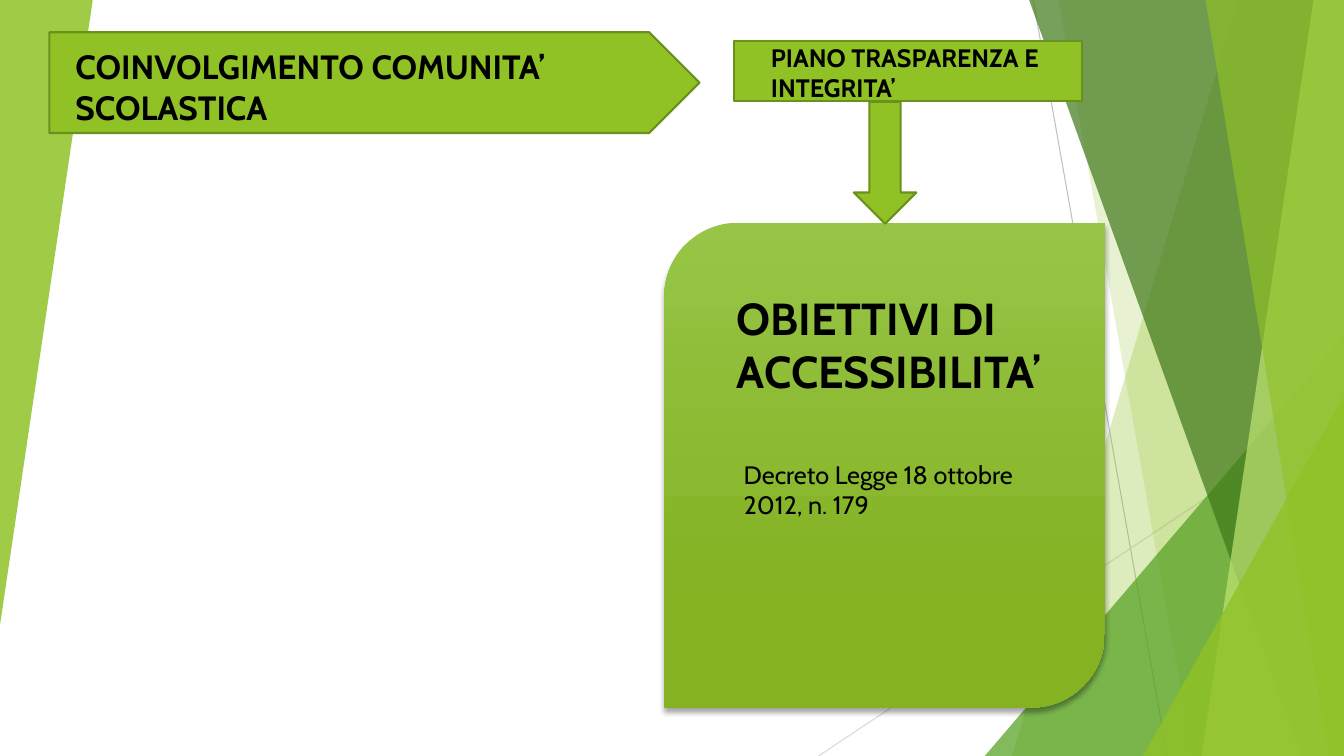
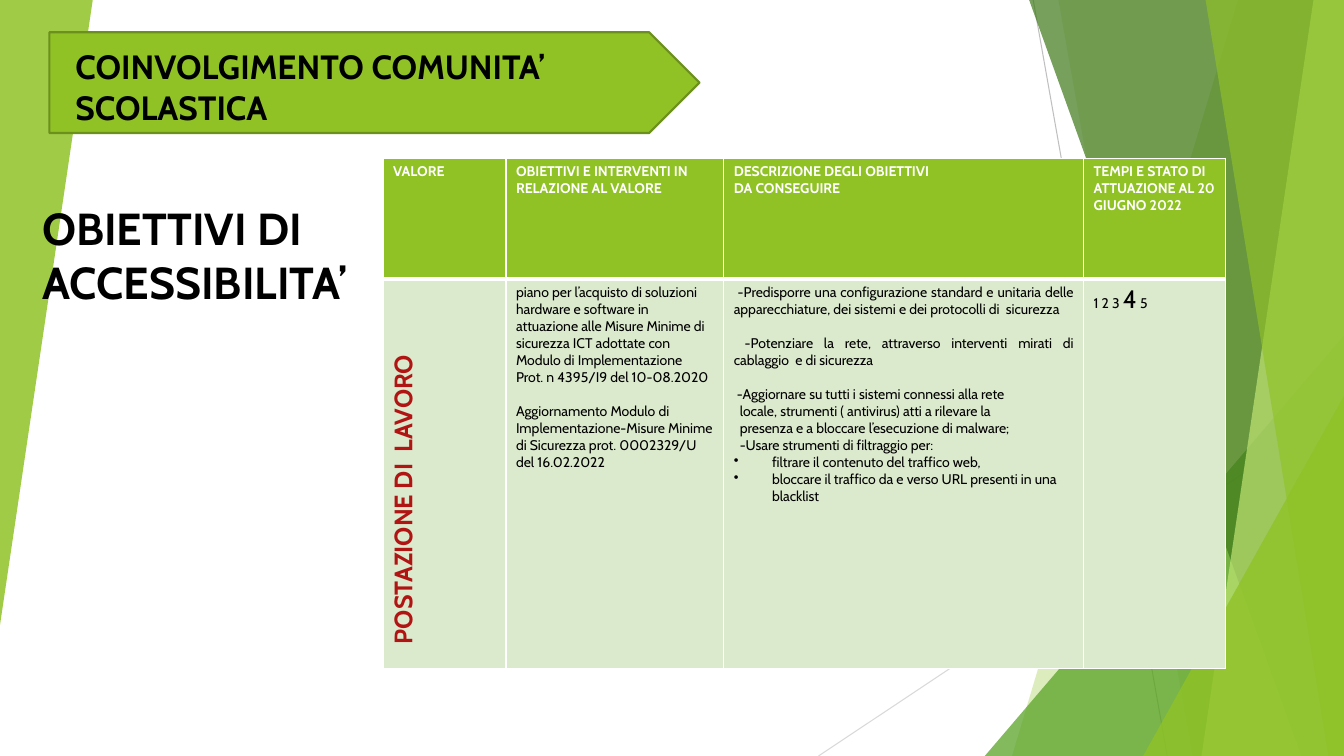
from dataclasses import dataclass, field

from lxml import etree
from pptx import Presentation
from pptx import util as u
from pptx.dml.color import RGBColor
from pptx.enum import shapes, text
from pptx.oxml.ns import qn

GREEN = RGBColor(0x90, 0xC2, 0x26)
EDGE = RGBColor(0x6B, 0x90, 0x1C)
LEAF = RGBColor(0x54, 0xA0, 0x21)
FOREST = RGBColor(0x3F, 0x78, 0x19)
LIME = RGBColor(0xC0, 0xE4, 0x74)
CARD_TOP = RGBColor(0x97, 0xC5, 0x47)
CARD_BASE = RGBColor(0x84, 0xB2, 0x23)
PALE = RGBColor(0xDB, 0xE9, 0xCD)
RED = RGBColor(0xB0, 0x15, 0x13)
GREY = RGBColor(0xBF, 0xBF, 0xBF)
SILVER = RGBColor(0xD9, 0xD9, 0xD9)
BLACK = RGBColor(0, 0, 0)
WHITE = RGBColor(0xFF, 0xFF, 0xFF)

CELL = u.Inches(0.1)
WIDE, HIGH = 133.33, 75
KIND = shapes.MSO_SHAPE
JUSTIFY = {"alignment": text.PP_ALIGN.JUSTIFY}
GAP = {"space_before": u.Pt(12)}

BANNER = {"size": 24, "bold": True}
TITLE = {"size": 32, "bold": True}
LABEL = {"size": 18, "bold": True}
NOTE = {"size": 18}
HEAD = {"size": 10, "bold": True, "color": WHITE}
BODY = {"size": 10}
VALUE = {"size": 18, "bold": True, "color": RED}


def grid(*cells):
    return [round(cell * CELL) for cell in cells]


def child(parent, tag, **values):
    return etree.SubElement(parent, qn(tag), {key: str(value) for key, value in values.items()})


@dataclass
class Line:
    spans: list
    layout: dict = field(default_factory=dict)
    left: float = 0
    first: float = 0
    bullet: str = ""


def lines(style, *wordings, **options):
    return [Line([(wording, style)], **options) for wording in wordings]


class Deck:
    font = "Cabin"

    def __init__(self):
        self.show = Presentation()
        self.show.slide_width, self.show.slide_height = grid(WIDE, HIGH)
        self.page = None

    def new_page(self):
        self.page = self.show.slides.add_slide(self.show.slide_layouts[6])
        self.backdrop()
        self.shape(KIND.PENTAGON, 4.9, 3.2, 64.5, 10, edge=EDGE)
        self.words(6.5, 4.1, 60.2, 9.1, "COINVOLGIMENTO COMUNITA’ SCOLASTICA", BANNER)

    def backdrop(self):
        self.line(102.5, 0, 115.8, HIGH, GREY)
        self.line(WIDE, 40.3, 81.2, HIGH, SILVER)
        self.band(122.8, 100.4, GREEN, 30)
        self.band(105, 118.3, GREEN, 20)
        self.corner(97.7, 33.3, LEAF, 72)
        self.band(102.1, 129.1, FOREST, 70)
        self.band(130.3, 119.2, LIME, 70)
        self.band(119.6, 131.8, GREEN, 65)
        self.corner(113.4, 39.3, GREEN, 80)
        self.triangle(0, 0, 9.2, 62, GREEN, 85).rotation = 180

    def paint(self, shape, fill, opacity=100, edge=None):
        shape.shadow.inherit = False
        shape.fill.solid()
        shape.fill.fore_color.rgb = fill
        if opacity < 100:
            color = shape.element.spPr.find(qn("a:solidFill"))[0]
            child(color, "a:alpha", val=opacity * 1000)
        if edge is None:
            shape.line.fill.background()
        else:
            shape.line.color.rgb = edge
            shape.line.width = u.Pt(1.5)
        return shape

    def line(self, x1, y1, x2, y2, color):
        line = self.page.shapes.add_connector(
            shapes.MSO_CONNECTOR.STRAIGHT, *grid(x1, y1, x2, y2))
        line.line.color.rgb = color
        line.line.width = u.Pt(0.75)
        child(line.element.spPr, "a:effectLst")

    def band(self, top, bottom, color, opacity):
        builder = self.page.shapes.build_freeform(*grid(top, 0))
        corners = [(WIDE, 0), (WIDE, HIGH), (bottom, HIGH)]
        builder.add_line_segments([grid(*corner) for corner in corners])
        self.paint(builder.convert_to_shape(), color, opacity)

    def shape(self, kind, x, y, width, height, fill=GREEN, opacity=100, edge=None):
        shape = self.page.shapes.add_shape(kind, *grid(x, y, width, height))
        return self.paint(shape, fill, opacity, edge)

    def triangle(self, x, y, width, height, fill, opacity):
        shape = self.shape(KIND.ISOSCELES_TRIANGLE, x, y, width, height, fill, opacity)
        shape.adjustments[0] = 1
        return shape

    def corner(self, x, y, fill, opacity):
        self.triangle(x, y, WIDE - x, HIGH - y, fill, opacity)

    def card(self, x, y, width, height):
        card = self.shape(KIND.ROUND_2_DIAG_RECTANGLE, x, y, width, height)
        card.fill.gradient()
        card.fill.gradient_angle = 270
        for stop, (place, color) in zip(card.fill.gradient_stops, [(0, CARD_TOP), (0.78, CARD_BASE)]):
            stop.position = place
            stop.color.rgb = color
        effects = card.element.spPr.find(qn("a:effectLst"))
        shadow = child(effects, "a:outerShdw", blurRad=u.Pt(4), dist=u.Pt(3),
                       dir=90 * 60000, rotWithShape=0)
        child(child(shadow, "a:srgbClr", val=BLACK), "a:alpha", val=35000)

    def fill_text(self, frame, content):
        frame.word_wrap = True
        for index, line in enumerate(content):
            para = frame.add_paragraph() if index else frame.paragraphs[0]
            for name, value in line.layout.items():
                setattr(para, name, value)
            if line.left or line.first:
                indent, hang = grid(line.left, line.first)
                properties = para._p.get_or_add_pPr()
                properties.set("marL", str(indent))
                properties.set("indent", str(hang))
                if line.bullet:
                    child(properties, "a:buChar", char=line.bullet)
            for wording, style in line.spans:
                span = para.add_run()
                span.text = wording
                values = {"name": self.font, "size": u.Pt(style["size"]),
                          "bold": style.get("bold", False)}
                for name, value in values.items():
                    setattr(span.font, name, value)
                span.font.color.rgb = style.get("color", BLACK)

    def words(self, x, y, width, height, wording, style):
        box = self.page.shapes.add_textbox(*grid(x, y, width, height))
        self.fill_text(box.text_frame, lines(style, wording))

    def table(self, x, y, widths, heights, rows):
        table = self.page.shapes.add_table(
            len(rows), len(widths), *grid(x, y, sum(widths), sum(heights))).table
        for column, width in zip(table.columns, grid(*widths)):
            column.width = width
        for row, height in zip(table.rows, grid(*heights)):
            row.height = height
        for r, row in enumerate(rows):
            for c, content in enumerate(row):
                cell = table.cell(r, c)
                self.fill_text(cell.text_frame, content)
                self.borders(cell, {"L": 1, "R": 1, "T": 1 if r == 0 else 3,
                                    "B": 3 if r == 0 else 1})
                cell.fill.solid()
                cell.fill.fore_color.rgb = PALE if r else GREEN
        return table

    def borders(self, cell, widths):
        properties = cell._tc.get_or_add_tcPr()
        for side, width in widths.items():
            border = child(properties, "a:ln" + side, w=u.Pt(width))
            child(child(border, "a:solidFill"), "a:srgbClr", val=WHITE)


HEADINGS = [
    lines(HEAD, "VALORE"),
    lines(HEAD, "OBIETTIVI E INTERVENTI IN RELAZIONE AL VALORE"),
    lines(HEAD, "DESCRIZIONE DEGLI OBIETTIVI", "DA CONSEGUIRE"),
    lines(HEAD, "TEMPI E STATO DI", "ATTUAZIONE AL 20 GIUGNO 2022"),
]
ACTIONS = [
    *lines(BODY, "piano per l’acquisto di soluzioni hardware e software in attuazione alle "
           "Misure Minime di sicurezza ICT adottate con Modulo di Implementazione",
           "Prot. n 4395/I9 del 10-08.2020"),
    *lines(BODY, "Aggiornamento Modulo di Implementazione-Misure Minime di Sicurezza "
           "prot. 0002329/U del 16.02.2022", layout=GAP),
]
GOALS = [
    *lines(BODY, " -Predisporre una configurazione standard e unitaria delle apparecchiature, "
           "dei sistemi e dei protocolli di  sicurezza", layout=JUSTIFY),
    *lines(BODY, " -Potenziare la rete, attraverso interventi mirati di cablaggio  e di sicurezza",
           layout=JUSTIFY | GAP),
    *lines(BODY, "-Aggiornare su tutti i sistemi connessi alla rete", layout=GAP, left=0.3),
    *lines(BODY, "locale, strumenti ( antivirus) atti a rilevare la",
           "presenza e a bloccare l’esecuzione di malware;",
           "-Usare strumenti di filtraggio per:", left=0.6),
    *lines(BODY, "filtrare il contenuto del traffico web,",
           "bloccare il traffico da e verso URL presenti in una blacklist",
           left=3.8, first=-3.8, bullet="•"),
]
STATUS = [Line([("1 2 3 ", BODY), ("4", NOTE), (" 5", BODY)])]
GOAL_TITLE = "OBIETTIVI DI ACCESSIBILITA’"


def plan_page(deck):
    deck.new_page()
    deck.card(65.9, 22.1, 43.7, 48.1)
    deck.shape(KIND.RECTANGLE, 72.8, 4.1, 34.5, 5.9, edge=EDGE)
    deck.shape(KIND.DOWN_ARROW, 84.7, 10.1, 6.2, 12.1, edge=EDGE)
    deck.words(75.5, 3.7, 34.5, 7.1, "PIANO TRASPARENZA E INTEGRITA’", LABEL)
    deck.words(72.1, 28.3, 37.5, 11.8, GOAL_TITLE, TITLE)
    deck.words(72.8, 45.1, 30, 7, "Decreto Legge 18 ottobre 2012, n. 179", NOTE)


def goals_page(deck):
    deck.new_page()
    place = lines(VALUE, "POSTAZIONE DI  LAVORO", left=1.4)
    table = deck.table(38, 15.7, [12.2, 21.6, 35.7, 14.1], [12, 38.6],
                       [HEADINGS, [place, ACTIONS, GOALS, STATUS]])
    table.cell(1, 0)._tc.tcPr.set("vert", "vert270")
    deck.words(3.2, 19.4, 39, 11.8, GOAL_TITLE, TITLE)


def main():
    deck = Deck()
    plan_page(deck)
    goals_page(deck)
    deck.show.save("out.pptx")


if __name__ == "__main__":
    main()
